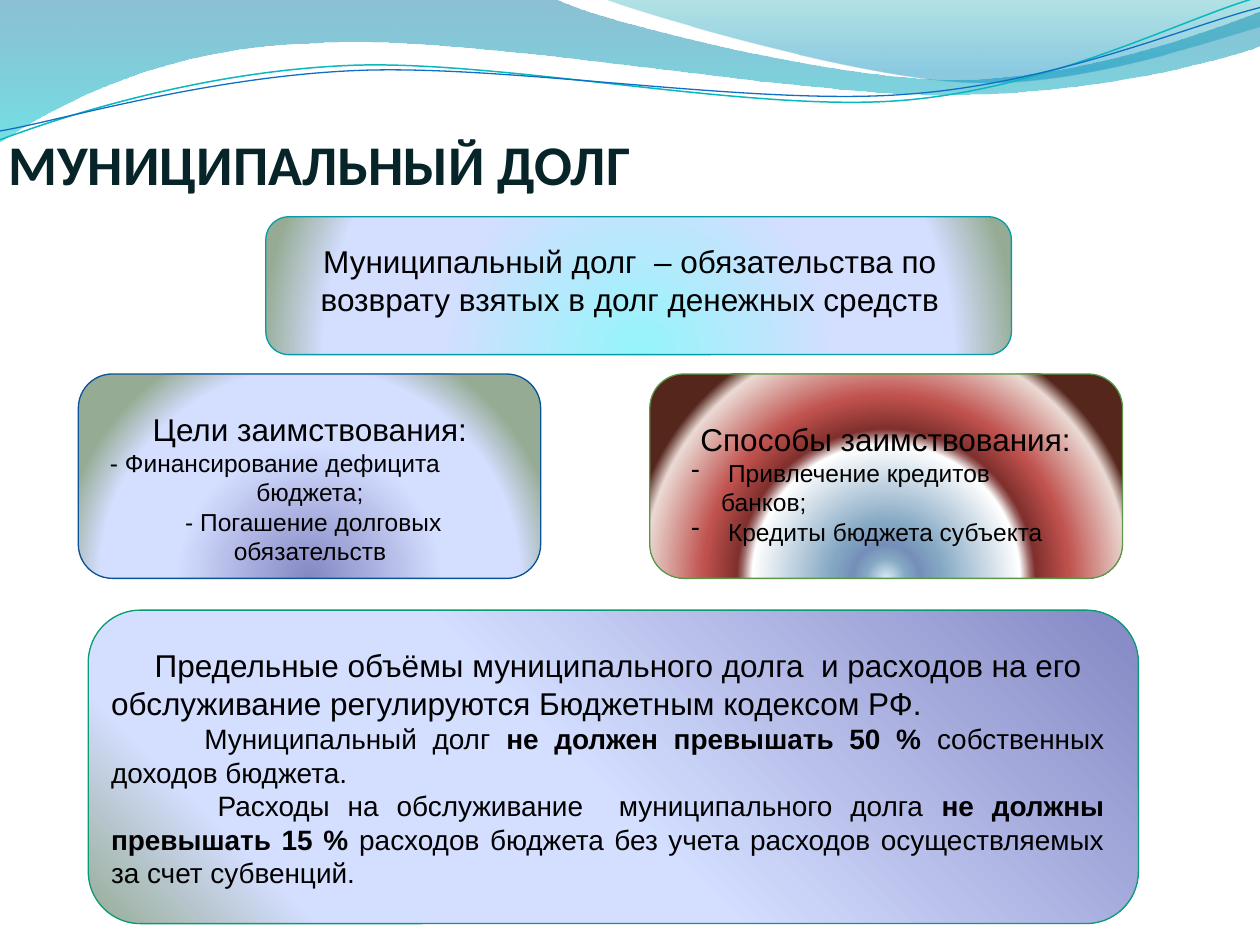
"""Build the slide about municipal debt with its wave header and four gradient panels."""
from lxml.etree import SubElement
from pptx import Presentation
from pptx.dml.color import RGBColor
from pptx.enum.shapes import MSO_SHAPE
from pptx.enum.text import MSO_ANCHOR, MSO_AUTO_SIZE, PP_ALIGN
from pptx.oxml.ns import qn
from pptx.util import Cm, Pt

TITLE = "МУНИЦИПАЛЬНЫЙ ДОЛГ"

LAVENDER = [(53, "D4DEFF"), (83, "D4DEFF"), (100, "96AB94")]
VIOLET = [(0, "8488C4")] + LAVENDER
CYAN = [(0, "94F5FA")] + LAVENDER
RINGS = [(0, "DCEBF5"), (8, "83A7C3"), (13, "768FB9"), (21, "83A7C3"), (52, "FFFFFF"),
         (56, "9C6563"), (58, "80302D"), (71, "C0524E"), (94, "EBDAD4"), (100, "55261C")]
BOTTOM_CENTRE = (50, 100, 50, 0)
TOP_RIGHT = (100, 0, 0, 100)

PANELS = [
    ((1.78, 12.3, 21.17, 6.32), VIOLET, TOP_RIGHT, "0A9B74"),
    ((13.1, 7.54, 9.53, 4.12), RINGS, BOTTOM_CENTRE, "5B9747"),
    ((1.58, 7.54, 9.32, 4.12), VIOLET, BOTTOM_CENTRE, "095295"),
    ((5.36, 4.37, 15.03, 2.78), CYAN, BOTTOM_CENTRE, "069CA3"),
]

CENTRE, LEFT, JUSTIFY = PP_ALIGN.CENTER, PP_ALIGN.LEFT, PP_ALIGN.JUSTIFY
GOAL = {"left": 1.41, "right": 1.41}
METHOD = {"left": 0.6, "right": 0.5, "indent": -0.6, "bullet": "-"}
TEXTS = [
    ((5.36, 4.75, 14.68, 1.8), [
        (18, CENTRE, {}, ["Муниципальный долг  – обязательства по возврату взятых в долг денежных средств"]),
    ]),
    ((1.79, 8.14, 8.92, 2.82), [
        (18, CENTRE, {}, ["Цели заимствования:"]),
        (14, CENTRE, {**GOAL, "indent": -1.41}, ["- Финансирование дефицита бюджета;"]),
        (14, CENTRE, GOAL, [" - Погашение долговых обязательств"]),
    ]),
    ((13.69, 8.34, 8.33, 2.24), [
        (18, CENTRE, {}, ["Способы заимствования:"]),
        (14, LEFT, METHOD, [" Привлечение кредитов банков;"]),
        (14, LEFT, METHOD, [" Кредиты бюджета субъекта"]),
    ]),
    ((1.99, 12.9, 20.52, 5.21), [
        (18, LEFT, {"indent": 0.88}, ["Предельные объёмы муниципального долга  и расходов на его обслуживание "
                                      "регулируются Бюджетным кодексом РФ."]),
        (16, JUSTIFY, {"indent": 1.88}, ["Муниципальный долг ", "не должен превышать 50 % ",
                                         "собственных доходов бюджета."]),
        (16, JUSTIFY, {"indent": 2.15}, ["Расходы на обслуживание  муниципального долга ",
                                         "не должны превышать 15 % ",
                                         "расходов бюджета без учета расходов осуществляемых за счет субвенций."]),
    ]),
]

INCH = 2.54
WAVES = [
    ([(0, 0), (4.4, -0.01), (4.76, 0.17, 6.64, 0.63, 7.58, 0.63), (8.53, 0.63, 9.58, 0.26, 10, 0.09),
      (10.01, 0.36), (9.83, 0.44, 8.7, 0.76, 7.46, 0.75), (6.22, 0.75, 3.82, 0.28, 2.57, 0.34),
      (1.29, 0.36, 0.46, 0.83, -0.01, 1.13)], [(0, "0074A1", 45), (100, "00C6CF", 55)]),
    ([(4.79, -0.01), (5.09, 0.11, 6.82, 0.62, 7.69, 0.65), (8.56, 0.69, 9.61, 0.32, 10, 0.21),
      (10, 0)], [(0, "00A1A9", 30), (80, "008BBF", 45)]),
]
STRANDS = [
    ([(0, 1.11), (0.48, 0.93, 1.58, 0.57, 2.77, 0.52), (3.95, 0.47, 5.93, 0.89, 7.13, 0.8),
      (8.33, 0.71, 9.38, 0.15, 9.98, -0.02)], "0AB8BF", 0.85),
    ([(0, 1.04), (0.47, 0.96, 1.64, 0.61, 2.83, 0.56), (4.03, 0.51, 5.97, 0.84, 7.17, 0.75),
      (8.36, 0.67, 9.41, 0.21, 10, 0.06)], "0F6FC6", 0.75),
]


def colour(value):
    return RGBColor.from_string(value)


def box(place):
    return [Cm(length) for length in place]


def set_gradient(shape, stops, focus=None):
    shape.fill.gradient()
    gradient = shape.element.spPr.find(qn("a:gradFill"))
    for child in list(gradient):
        gradient.remove(child)
    stop_list = SubElement(gradient, qn("a:gsLst"))
    for position, value, *opacity in stops:
        stop = SubElement(stop_list, qn("a:gs"), pos=str(position * 1000))
        tint = SubElement(stop, qn("a:srgbClr"), val=value)
        for percent in opacity:
            SubElement(tint, qn("a:alpha"), val=str(percent * 1000))
    if focus:
        circle = SubElement(gradient, qn("a:path"), path="circle")
        SubElement(circle, qn("a:fillToRect"), {side: str(percent * 1000) for side, percent in zip("ltrb", focus)})
    else:
        SubElement(gradient, qn("a:lin"), ang="5400000", scaled="0")


def add_curve(slide, segments, close):
    points = [(Cm(x * INCH), Cm(y * INCH))
              for segment in segments for x, y in zip(segment[::2], segment[1::2])]
    builder = slide.shapes.build_freeform(*points[0])
    builder.add_line_segments(points[1:], close=close)
    curve = builder.convert_to_shape()
    curve.shadow.inherit = False
    lines = curve.element.iter(qn("a:lnTo"))
    lines = iter(list(lines))
    for segment in segments[1:]:
        first, *others = [next(lines) for _ in segment[::2]]
        if others:
            bend = SubElement(first.getparent(), qn("a:cubicBezTo"))
            first.addprevious(bend)
            for line in (first, *others):
                bend.append(line[0])
                line.getparent().remove(line)
    return curve


def set_line(shape, value, width):
    shape.line.color.rgb = colour(value)
    shape.line.width = Pt(width)


def style(paragraph, size, font, value):
    paragraph.font.size = Pt(size)
    paragraph.font.name = font
    paragraph.font.color.rgb = colour(value)


def set_indents(paragraph, left=0, right=0, indent=0, bullet=None):
    properties = paragraph._p.get_or_add_pPr()
    for name, length in (("marL", left), ("marR", right), ("indent", indent)):
        properties.set(name, str(Cm(length)))
    if bullet:
        properties.insert(0, SubElement(properties, qn("a:buChar"), char=bullet))
        properties.insert(0, SubElement(properties, qn("a:buFontTx")))


def add_text(slide, place, paragraphs):
    frame = slide.shapes.add_textbox(*box(place)).text_frame
    frame.word_wrap = True
    frame.auto_size = MSO_AUTO_SIZE.SHAPE_TO_FIT_TEXT
    for number, (size, align, indents, parts) in enumerate(paragraphs):
        paragraph = frame.add_paragraph() if number else frame.paragraphs[0]
        paragraph.alignment = align
        style(paragraph, size, "Arial", "000000")
        set_indents(paragraph, **indents)
        for position, part in enumerate(parts):
            run = paragraph.add_run()
            run.text = part
            if position == 1:
                run.font.bold = True


def add_title(slide):
    frame = slide.shapes.add_textbox(*box((-0.58, 1.19, 16.03, 2.77))).text_frame
    frame.word_wrap = True
    frame.vertical_anchor = MSO_ANCHOR.BOTTOM
    frame.margin_left = frame.margin_right = frame.margin_bottom = 0
    heading = frame.paragraphs[0]
    heading.text = TITLE
    style(heading, 32, "Calibri", "072428")
    set_indents(heading, indent=0.75)
    heading.font.bold = True


def main():
    deck = Presentation()
    deck.slide_width, deck.slide_height = Cm(25.4), Cm(19.05)
    slide = deck.slides.add_slide(deck.slide_layouts[6])
    for segments, stops in WAVES:
        wave = add_curve(slide, segments, True)
        set_gradient(wave, stops)
        wave.line.fill.background()
    for segments, value, width in STRANDS:
        strand = add_curve(slide, segments, False)
        strand.fill.background()
        set_line(strand, value, width)
    for place, stops, focus, outline in PANELS:
        panel = slide.shapes.add_shape(MSO_SHAPE.ROUNDED_RECTANGLE, *box(place))
        panel.shadow.inherit = False
        set_gradient(panel, stops, focus)
        set_line(panel, outline, 0.75)
    add_title(slide)
    for place, paragraphs in TEXTS:
        add_text(slide, place, paragraphs)
    deck.save("out.pptx")


if __name__ == "__main__":
    main()
